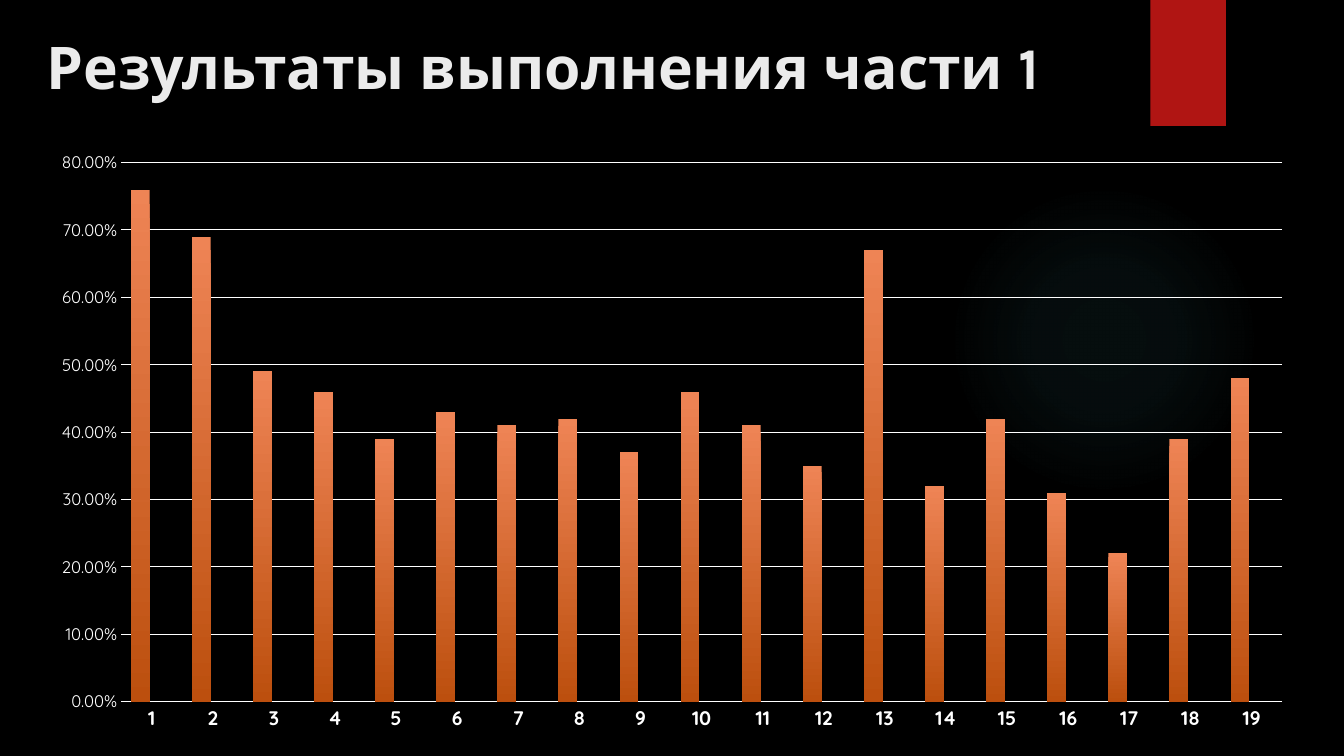
from lxml import etree
from pptx import Presentation
from pptx.chart.data import CategoryChartData
from pptx.dml.color import RGBColor
from pptx.enum.chart import XL_CHART_TYPE as ChartType, XL_TICK_MARK as TickMark
from pptx.enum.shapes import MSO_SHAPE as Shape
from pptx.enum.text import MSO_ANCHOR as Anchor, MSO_AUTO_SIZE as AutoSize, PP_ALIGN as Align
from pptx.oxml.ns import nsdecls, qn
from pptx.util import Inches, Pt

TITLE = "Результаты выполнения части 1"
RESULTS = [0.76, 0.69, 0.49, 0.46, 0.39, 0.43, 0.41, 0.42, 0.37, 0.46,
           0.41, 0.35, 0.67, 0.32, 0.42, 0.31, 0.22, 0.39, 0.48]
COLORS = {
    "background": "000000", "title": "EBEBEB", "text": "FFFFFF",
    "ribbon": "B01513", "glow": "50B9C1",
    "orange_top": "EE8455", "orange_bottom": "BC4F0E",
    "gold_top": "EBC65F", "gold_bottom": "BB941F",
}
SERIES = [
    ("Series 1", RESULTS, ("orange_top", "orange_bottom")),
    ("Series 2", [None] * len(RESULTS), ("gold_top", "gold_bottom")),
]
GLOW_STOPS = [(0, 7), (36, 6), (69, 0)]
PLACES = {
    "glow": (9.41, 1.83, 3.08, 3.08),
    "ribbon": (11.41, 0, 0.75, 1.25),
    "title": (0.36, 0.2, 11.03, 0.91),
    "chart": (0.36, 1.39, 12.61, 5.98),
}


def place(name):
    return [Inches(length) for length in PLACES[name]]


def color(name):
    return RGBColor.from_string(COLORS[name])


def set_font(font, name, size, tint, bold=False):
    values = {"name": name, "size": Pt(size), "bold": bold}
    for key, value in values.items():
        setattr(font, key, value)
    font.color.rgb = color(tint)


def add_plain_shape(slide, kind, name):
    shape = slide.shapes.add_shape(kind, *place(name))
    shape.shadow.inherit = False
    shape.fill.solid()
    shape.fill.fore_color.rgb = color(name)
    shape.line.fill.background()
    return shape


def add_glow(slide):
    properties = add_plain_shape(slide, Shape.OVAL, "glow")._element.spPr
    stops = "".join(
        f'<a:gs pos="{position * 1000}"><a:srgbClr val="{COLORS["glow"]}">'
        f'<a:alpha val="{alpha * 1000}"/></a:srgbClr></a:gs>'
        for position, alpha in GLOW_STOPS)
    gradient = etree.fromstring(
        f'<a:gradFill {nsdecls("a")} rotWithShape="1"><a:gsLst>{stops}</a:gsLst>'
        '<a:path path="circle"><a:fillToRect l="50000" t="50000" r="50000" b="50000"/>'
        '</a:path></a:gradFill>')
    properties.replace(properties.find(qn("a:solidFill")), gradient)


def add_title(slide):
    title = slide.shapes.title
    title.left, title.top, title.width, title.height = place("title")
    frame = title.text_frame
    frame.text = TITLE
    values = {"vertical_anchor": Anchor.MIDDLE, "word_wrap": True, "auto_size": AutoSize.NONE}
    for key, value in values.items():
        setattr(frame, key, value)
    para = frame.paragraphs[0]
    para.alignment = Align.LEFT
    set_font(para.runs[0].font, "Karla", 42, "title", True)


def add_results_chart(slide):
    data = CategoryChartData(number_format="0.00%")
    data.categories = [str(number) for number in range(1, len(RESULTS) + 1)]
    for name, values, _ in SERIES:
        data.add_series(name, values)
    chart = slide.shapes.add_chart(ChartType.COLUMN_CLUSTERED, *place("chart"), data).chart
    chart.has_legend = chart.has_title = False
    set_font(chart.font, "Quicksand", 10, "text")

    plot = chart.plots[0]
    plot.gap_width, plot.overlap, plot.vary_by_categories = 100, -24, False
    for series, (_, _, tints) in zip(plot.series, SERIES):
        fill = series.format.fill
        fill.gradient()
        fill.gradient_angle = 270
        for stop, tint in zip(fill.gradient_stops, tints):
            stop.color.rgb = color(tint)

    categories, percents = chart.category_axis, chart.value_axis
    for axis, size, bold in ((categories, 14, True), (percents, 12, False)):
        axis.major_tick_mark = axis.minor_tick_mark = TickMark.NONE
        set_font(axis.tick_labels.font, "Quicksand", size, "text", bold)
    percents.minimum_scale, percents.maximum_scale, percents.major_unit = 0, 0.8, 0.1
    percents.tick_labels.number_format = "0.00%"
    percents.tick_labels.number_format_is_linked = False
    percents.format.line.fill.background()
    for line, width in ((categories.format.line, 1), (percents.major_gridlines.format.line, 0.75)):
        line.color.rgb = color("text")
        line.width = Pt(width)


def main():
    deck = Presentation()
    deck.slide_width, deck.slide_height = Inches(13.33), Inches(7.5)
    slide = deck.slides.add_slide(deck.slide_layouts[5])
    slide.background.fill.solid()
    slide.background.fill.fore_color.rgb = color("background")
    add_glow(slide)
    add_plain_shape(slide, Shape.RECTANGLE, "ribbon")
    add_title(slide)
    add_results_chart(slide)
    deck.save("out.pptx")


if __name__ == "__main__":
    main()
